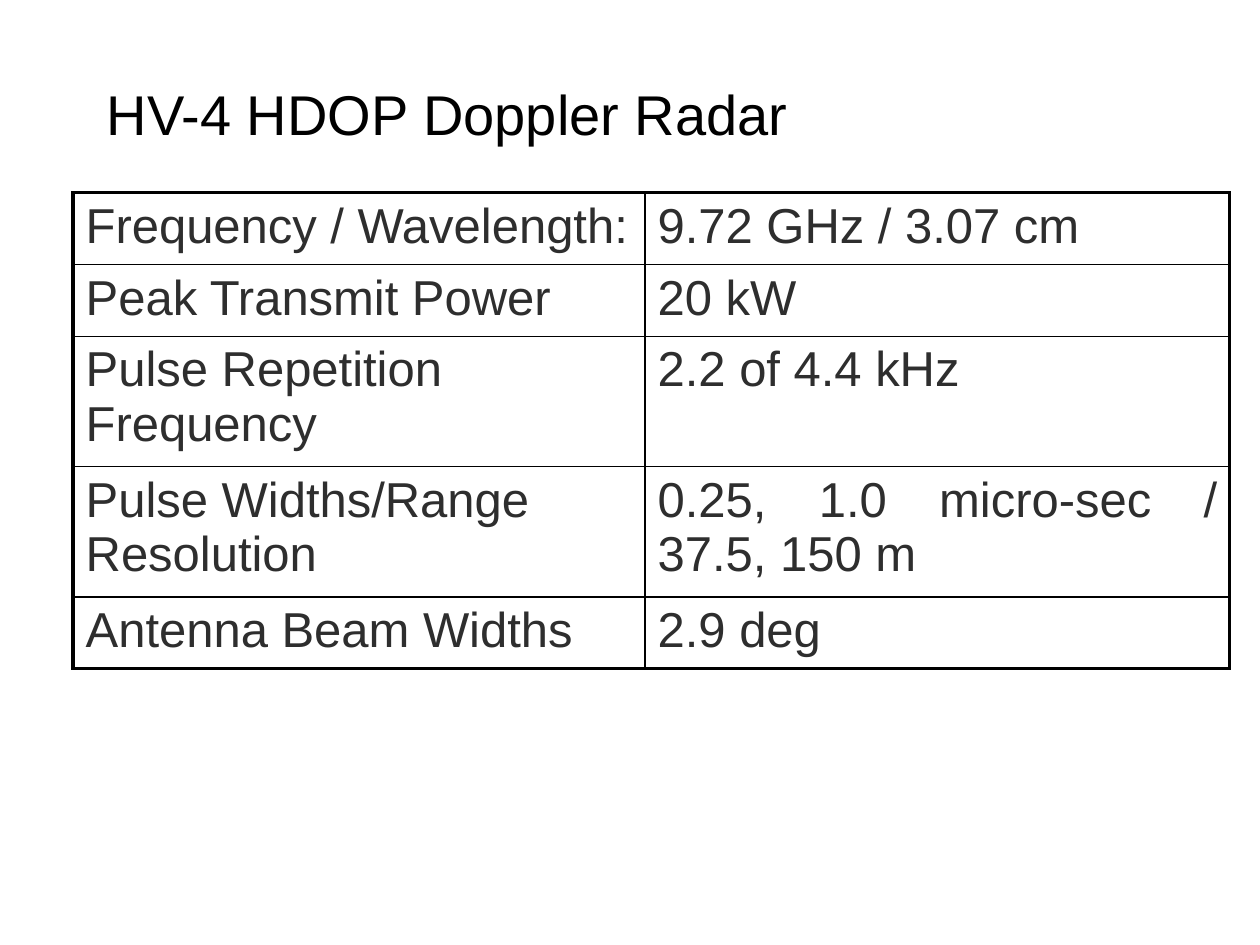
from lxml import etree
from pptx import Presentation
from pptx.dml.color import RGBColor
from pptx.enum.text import PP_ALIGN
from pptx.oxml.ns import qn
from pptx.util import Inches, Pt

LEFT, JUSTIFY = PP_ALIGN.LEFT, PP_ALIGN.JUSTIFY
COLORS = {"title": "000000", "text": "2E2E2E", "border": "000000"}
FONT = "Arial"
OUTER, INNER = Pt(2.25), Pt(1)

RADAR_SPECS = [
    ("Frequency / Wavelength:", "9.72 GHz / 3.07 cm"),
    ("Peak Transmit Power", "20 kW"),
    ("Pulse Repetition Frequency", "2.2 of 4.4 kHz"),
    ("Pulse Widths/Range Resolution", "0.25, 1.0 micro-sec / 37.5, 150 m"),
    ("Antenna Beam Widths", "2.9 deg"),
]
COLUMN_WIDTHS = [4.54, 4.64]
ROW_HEIGHTS = [0.57, 0.57, 1.03, 1.03, 0.57]


def write(paragraph, text, size, color, alignment=LEFT):
    paragraph.text = text
    paragraph.alignment = alignment
    font = paragraph.runs[0].font
    font.name, font.size = FONT, Pt(size)
    font.color.rgb = RGBColor.from_string(COLORS[color])


def set_borders(cell, widths):
    """Draw solid cell borders; widths maps the side tags L, R, T, B to lengths."""
    properties = cell._tc.get_or_add_tcPr()
    for position, (side, width) in enumerate(widths.items()):
        line = etree.Element(qn(f"a:ln{side}"), w=str(int(width)))
        fill = etree.SubElement(line, qn("a:solidFill"))
        etree.SubElement(fill, qn("a:srgbClr"), val=COLORS["border"])
        properties.insert(position, line)


presentation = Presentation()
presentation.slide_width, presentation.slide_height = Inches(10), Inches(7.5)
slide = presentation.slides.add_slide(presentation.slide_layouts[6])

heading = slide.shapes.add_textbox(Inches(0.75), Inches(0.58), Inches(8.5), Inches(4.5))
heading.text_frame.word_wrap = True
heading_line = heading.text_frame.paragraphs[0]
write(heading_line, "HV-4 HDOP Doppler Radar", 32, "title")
heading_line.space_before = Pt(3)

specs = slide.shapes.add_table(
    len(RADAR_SPECS), len(COLUMN_WIDTHS), Inches(0.58), Inches(1.53),
    Inches(sum(COLUMN_WIDTHS)), Inches(sum(ROW_HEIGHTS)),
).table
specs.first_row = specs.horz_banding = False
for column, width in zip(specs.columns, COLUMN_WIDTHS):
    column.width = Inches(width)
for row, height in zip(specs.rows, ROW_HEIGHTS):
    row.height = Inches(height)

last_row, last_column = len(RADAR_SPECS) - 1, len(COLUMN_WIDTHS) - 1
for r, entry in enumerate(RADAR_SPECS):
    for c, text in enumerate(entry):
        cell = specs.cell(r, c)
        cell.fill.background()
        write(cell.text_frame.paragraphs[0], text, 28, "text", JUSTIFY if c else LEFT)
        set_borders(cell, {
            "L": OUTER if c == 0 else INNER,
            "R": OUTER if c == last_column else INNER,
            "T": OUTER if r == 0 else INNER,
            "B": OUTER if r == last_row else INNER,
        })

presentation.save("out.pptx")
